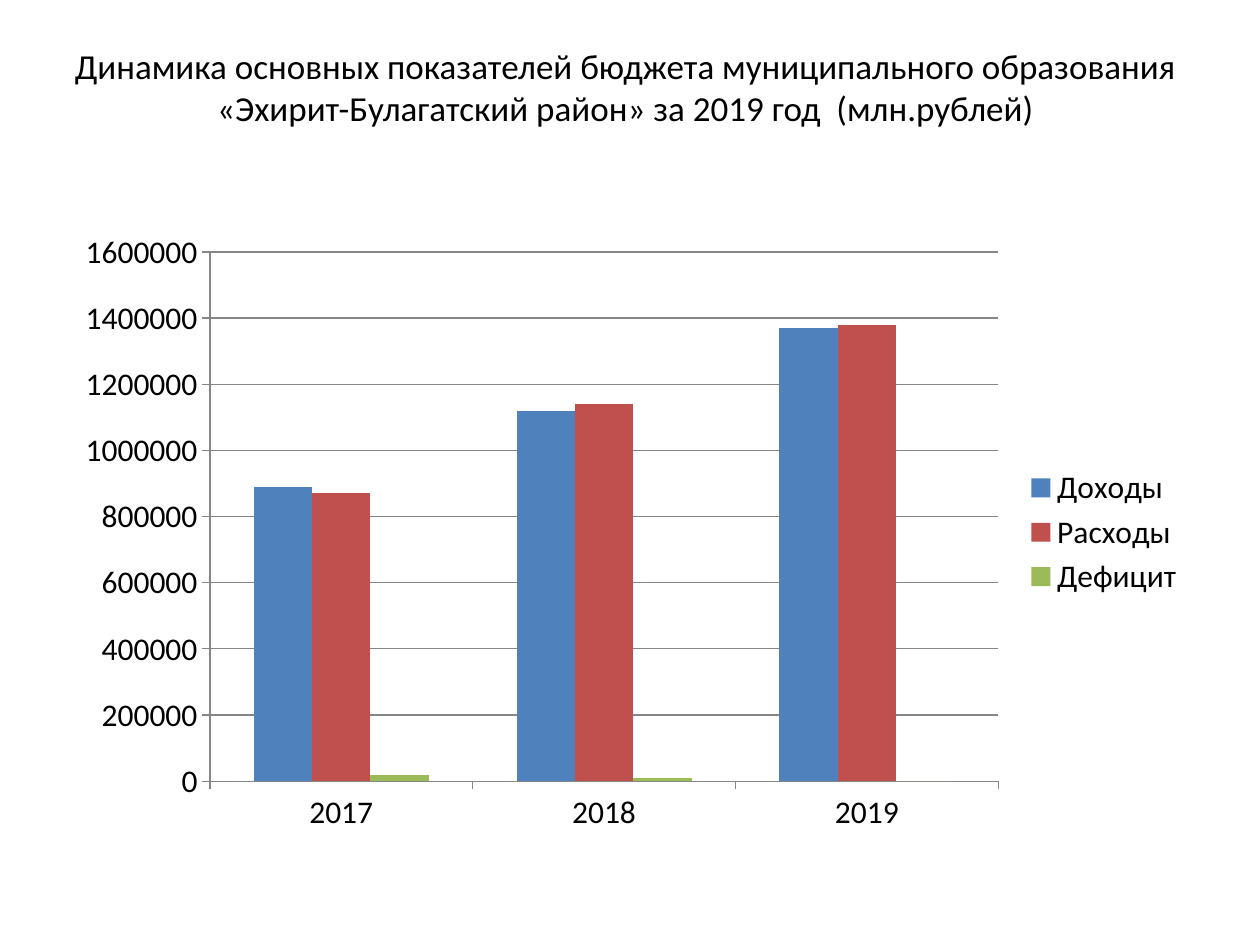
from pptx import Presentation
from pptx.chart.data import CategoryChartData
from pptx.dml.color import RGBColor
from pptx.enum.chart import XL_CHART_TYPE as ChartType, XL_LEGEND_POSITION as LegendPosition
from pptx.enum.chart import XL_TICK_MARK as TickMark
from pptx.enum.text import MSO_ANCHOR as Anchor, PP_ALIGN as Align
from pptx.util import Inches, Pt

FONT = "Calibri"
BLACK = "000000"
AXIS_GRAY = "868686"
TITLE = (
    "Динамика основных показателей бюджета муниципального образования "
    "«Эхирит-Булагатский район» за 2019 год  (млн.рублей)"
)
YEARS = ["2017", "2018", "2019"]
BUDGET = [
    ("Доходы", "4F81BD", [890000, 1120000, 1370000]),
    ("Расходы", "C0504D", [870000, 1140000, 1380000]),
    ("Дефицит", "9BBB59", [20000, 10000, 0]),
]


def rgb(value):
    """Turn a hex string into a colour."""
    return RGBColor.from_string(value)


def set_all(target, formats):
    """Set every attribute in a dict of format values."""
    for name, value in formats.items():
        setattr(target, name, value)


def style_font(font, size):
    """Give a font the slide's typeface and colour."""
    set_all(font, {"name": FONT, "size": Pt(size), "bold": False})
    font.color.rgb = rgb(BLACK)


def style_line(line):
    """Draw a chart line in thin gray."""
    line.color.rgb = rgb(AXIS_GRAY)
    line.width = Pt(0.75)


def add_title(page, text, left, top, width, height):
    """Add the centred slide title."""
    box = page.shapes.add_textbox(Inches(left), Inches(top), Inches(width), Inches(height))
    frame = box.text_frame
    set_all(frame, {"word_wrap": True, "vertical_anchor": Anchor.MIDDLE})
    para = frame.paragraphs[0]
    para.alignment = Align.CENTER
    span = para.add_run()
    span.text = text
    style_font(span.font, 20)


def add_budget_chart(page, left, top, width, height):
    """Add the clustered columns of income, spending and deficit."""
    data = CategoryChartData()
    data.categories = YEARS
    for name, _, values in BUDGET:
        data.add_series(name, values)
    chart = page.shapes.add_chart(
        ChartType.COLUMN_CLUSTERED,
        Inches(left), Inches(top), Inches(width), Inches(height), data,
    ).chart
    style_font(chart.font, 18)
    set_all(chart, {"has_title": False, "has_legend": True})
    set_all(chart.legend, {"position": LegendPosition.RIGHT, "include_in_layout": False})
    plot = chart.plots[0]
    set_all(plot, {"gap_width": 150, "overlap": 0, "vary_by_categories": False})
    for series, (_, color, _) in zip(plot.series, BUDGET):
        series.format.fill.solid()
        series.format.fill.fore_color.rgb = rgb(color)
    for axis in (chart.category_axis, chart.value_axis):
        set_all(axis, {"major_tick_mark": TickMark.OUTSIDE, "minor_tick_mark": TickMark.NONE})
        style_line(axis.format.line)
    scale = {"minimum_scale": 0, "maximum_scale": 1600000, "major_unit": 200000}
    set_all(chart.value_axis, {**scale, "has_major_gridlines": True})
    style_line(chart.value_axis.major_gridlines.format.line)


def main():
    """Build the slide and save it."""
    deck = Presentation()
    set_all(deck, {"slide_width": Inches(10), "slide_height": Inches(7.5)})
    page = deck.slides.add_slide(deck.slide_layouts[6])
    add_title(page, TITLE, 0.43, 0.3, 9.07, 0.77)
    add_budget_chart(page, 0.5, 1.75, 9, 4.95)
    deck.save("out.pptx")


if __name__ == "__main__":
    main()
